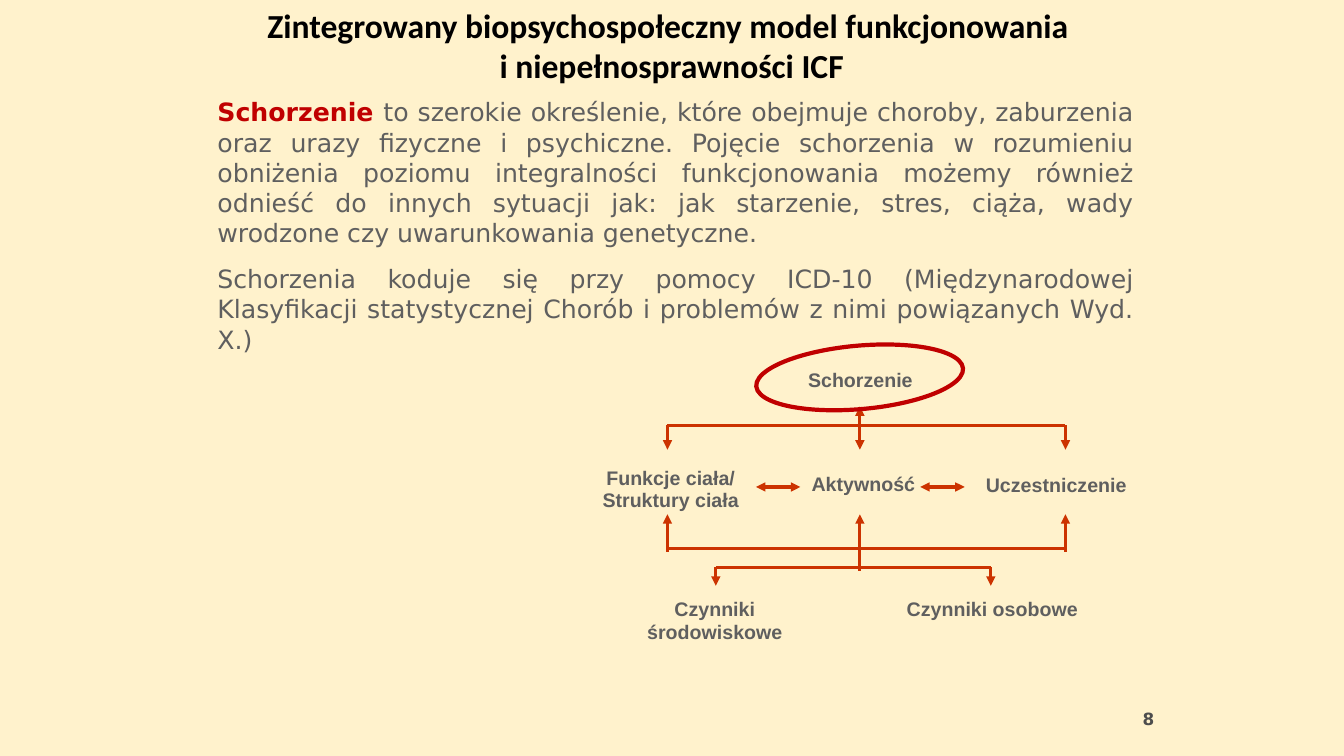
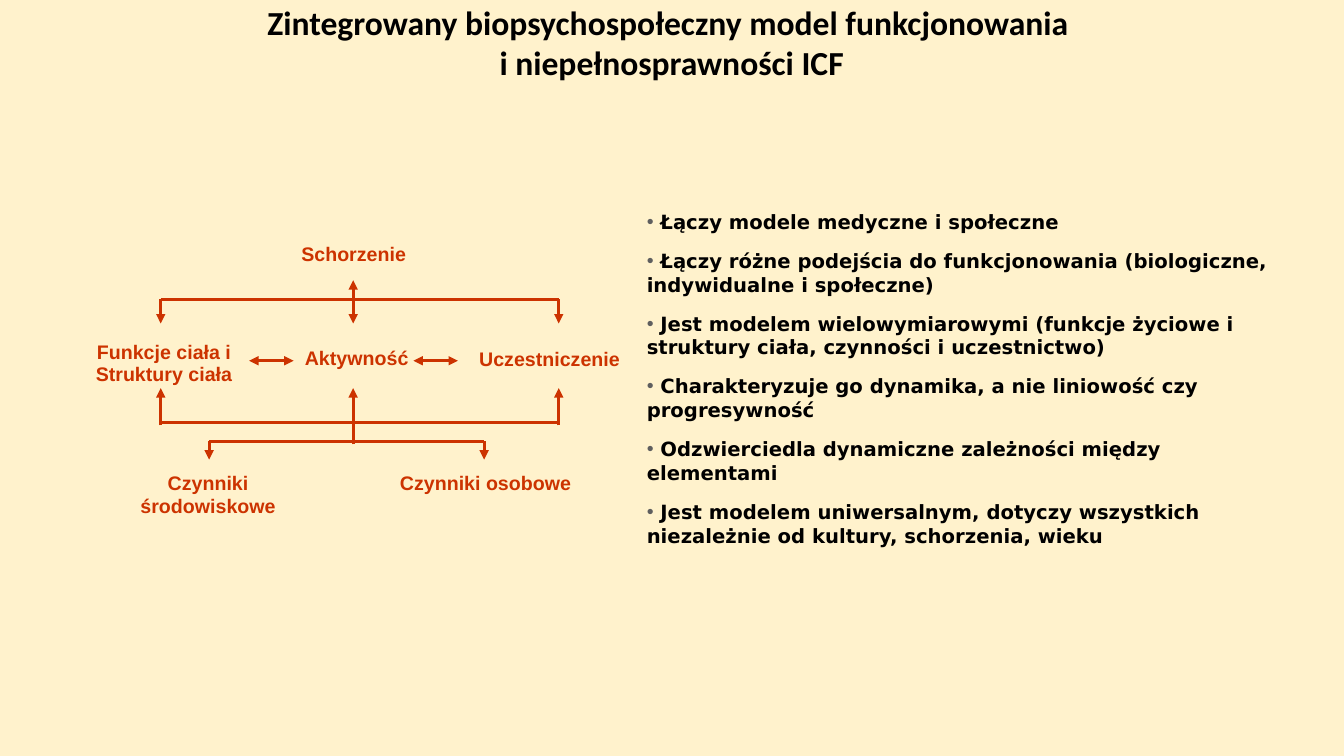
from pptx import Presentation
from pptx.dml.color import RGBColor
from pptx.enum.shapes import MSO_CONNECTOR as Connector, MSO_SHAPE as Preset
from pptx.enum.text import PP_ALIGN as Align
from pptx.oxml.ns import qn
from pptx.util import Cm, Pt
from lxml.etree import SubElement

CREAM = RGBColor(0xFF, 0xF2, 0xCC)
BLACK = RGBColor(0, 0, 0)
GREY = RGBColor(0x5F, 0x5F, 0x5F)
DARK_GREY = RGBColor(0x4D, 0x4D, 0x4D)
CRIMSON = RGBColor(0xC0, 0, 0)
ORANGE = RGBColor(0xCC, 0x33, 0)

TITLE_FONT, BODY_FONT, LABEL_FONT = "Calibri", "DejaVu Sans", "Arial"
TITLE_LINES = ("Zintegrowany biopsychospołeczny model funkcjonowania ",
               "i niepełnosprawności ICF")


class Slides:
    """Holds the shared style and the current page; lengths are in cm."""

    def __init__(self):
        self.deck = Presentation()
        self.deck.slide_width, self.deck.slide_height = Cm(33.87), Cm(19.05)
        self.page = None

    def new_page(self):
        self.page = self.deck.slides.add_slide(self.deck.slide_layouts[6])
        fill = self.page.background.fill
        fill.solid()
        fill.fore_color.rgb = CREAM

    def box(self, left, top, width, height):
        box = self.page.shapes.add_textbox(Cm(left), Cm(top), Cm(width), Cm(height))
        box.text_frame.word_wrap = True
        return box

    def para(self, box, align=Align.LEFT, before=0, spacing=None):
        frame = box.text_frame
        first = frame.paragraphs[0]
        para = frame.add_paragraph() if first.runs else first
        para.alignment = align
        para.space_before = Pt(before)
        if spacing:
            para.line_spacing = spacing
        return para

    def span(self, para, text, font, size, color, bold=True):
        span = para.add_run()
        span.text = text
        span.font.name, span.font.size, span.font.bold = font, Pt(size), bold
        span.font.color.rgb = color

    def bullet(self, para):
        props = para._p.get_or_add_pPr()
        props.set("marL", "0")
        props.set("indent", "0")
        color = SubElement(props, qn("a:buClr"))
        SubElement(color, qn("a:srgbClr"), val=str(GREY))
        SubElement(props, qn("a:buFont"), typeface=LABEL_FONT)
        SubElement(props, qn("a:buChar"), char="•")

    def title(self, top=0):
        para = self.para(self.box(4.83, top, 24.2, 3.58), Align.CENTER)
        for index, text in enumerate(TITLE_LINES):
            if index:
                para.add_line_break()
            self.span(para, text, TITLE_FONT, 24, BLACK)

    def page_number(self, number):
        para = self.para(self.box(23.42, 17.73, 5.92, 1.32), Align.RIGHT)
        self.span(para, str(number), BODY_FONT, 12, DARK_GREY)

    def label(self, text, place, color, spacing=None):
        box = self.box(*place)
        para = self.para(box, Align.CENTER, spacing=spacing)
        self.span(para, text, LABEL_FONT, 14, color)
        return box

    def line(self, x1, y1, x2, y2, head=False, tail=False):
        line = self.page.shapes.add_connector(
            Connector.STRAIGHT, Cm(x1), Cm(y1), Cm(x2), Cm(y2))
        line.line.color.rgb = ORANGE
        line.line.width = Pt(2.25)
        stroke = line.line._get_or_add_ln()
        for tag, wanted in (("a:headEnd", head), ("a:tailEnd", tail)):
            if wanted:
                SubElement(stroke, qn(tag), type="triangle")
        SubElement(line._element.spPr, qn("a:effectLst"))
        return line

    def ring(self, left, top, width, height, angle):
        ring = self.page.shapes.add_shape(
            Preset.OVAL, Cm(left), Cm(top), Cm(width), Cm(height))
        ring.rotation = angle
        ring.shadow.inherit = False
        ring.fill.background()
        ring.line.color.rgb = CRIMSON
        ring.line.width = Pt(3)

    def icf_model(self, x, y, functions, color):
        """Draws the model; (x, y) is where the axis meets the upper bar."""
        def label(text, left, top, width, height, spacing=None):
            return self.label(text, (x + left, y + top, width, height), color, spacing)

        def line(x1, y1, x2, y2, **ends):
            return self.line(x + x1, y + y1, x + x2, y + y2, **ends)

        # Condition above, factors below
        label("Schorzenie", -2.92, -1.57, 5.87, 0.86)
        label("Czynniki środowiskowe", -6.6, 4.19, 5.89, 1.45)
        label("Czynniki osobowe", 0.56, 4.19, 5.56, 0.86)

        # Middle row
        body = label(functions, -6.91, 0.94, 4.29, 1.22, 0.95)
        activity = label("Aktywność", -1.5, 1.09, 3.18, 0.92, 0.95)
        label("Uczestniczenie", 2.83, 1.12, 4.24, 0.86, 0.95)
        link = line(-2.62, 1.55, -1.5, 1.55, head=True, tail=True)
        link.begin_connect(body, 3)
        link.end_connect(activity, 1)
        line(1.52, 1.55, 2.64, 1.55, head=True, tail=True)

        # Bars with their outer arrows: ends, bar height, arrow start and tip
        for ends, bar, start, tip in (((-4.85, 5.18), 0, 0, 0.61),
                                      ((-4.85, 5.18), 3.1, 3.18, 2.24),
                                      ((-3.63, 3.3), 3.58, 3.58, 4.04)):
            line(ends[0], bar, ends[1], bar)
            for end in ends:
                line(end, start, end, tip, tail=True)

        # Axis
        line(0, -0.48, 0, 0.61, head=True, tail=True)
        line(0, 3.66, 0, 2.24, tail=True)


def main():
    slides = Slides()

    # Condition
    slides.new_page()
    slides.page_number(8)
    body = slides.box(5.23, 2.31, 23.6, 6.81)
    para = slides.para(body, Align.JUSTIFY, 11.2)
    slides.span(para, "Schorzenie ", BODY_FONT, 18, CRIMSON)
    slides.span(para, "to szerokie określenie, które obejmuje choroby, zaburzenia "
                "oraz urazy fizyczne i psychiczne. Pojęcie schorzenia w rozumieniu "
                "obniżenia poziomu integralności funkcjonowania możemy również "
                "odnieść do innych sytuacji jak: jak starzenie, stres, ciąża, wady "
                "wrodzone czy uwarunkowania genetyczne.", BODY_FONT, 18, GREY, False)
    para = slides.para(body, Align.JUSTIFY, 11.2)
    slides.span(para, "Schorzenia koduje się przy pomocy ICD-10 (Międzynarodowej "
                "Klasyfikacji statystycznej Chorób i problemów z nimi powiązanych "
                "Wyd. X.)", BODY_FONT, 18, GREY, False)
    slides.icf_model(21.67, 10.72, "Funkcje ciała/ Struktury ciała", GREY)
    slides.ring(19.05, 8.71, 5.23, 1.6, 355)
    slides.title()

    # Features of the model
    slides.new_page()
    features = slides.box(16.05, 5.16, 16.33, 8.81)
    for text in ("Łączy modele medyczne i społeczne",
                 "Łączy różne podejścia do funkcjonowania (biologiczne, "
                 "indywidualne i społeczne)",
                 "Jest modelem wielowymiarowymi (funkcje życiowe i struktury "
                 "ciała, czynności i uczestnictwo)",
                 "Charakteryzuje go dynamika, a nie liniowość czy progresywność",
                 "Odzwierciedla dynamiczne zależności między elementami",
                 "Jest modelem uniwersalnym, dotyczy wszystkich niezależnie od "
                 "kultury, schorzenia, wieku"):
        para = slides.para(features, before=11.2)
        slides.bullet(para)
        slides.span(para, " " + text, BODY_FONT, 14, BLACK)
    slides.icf_model(8.9, 7.54, "Funkcje ciała i Struktury ciała", ORANGE)
    slides.title(-0.08)

    slides.deck.save("out.pptx")


if __name__ == "__main__":
    main()
